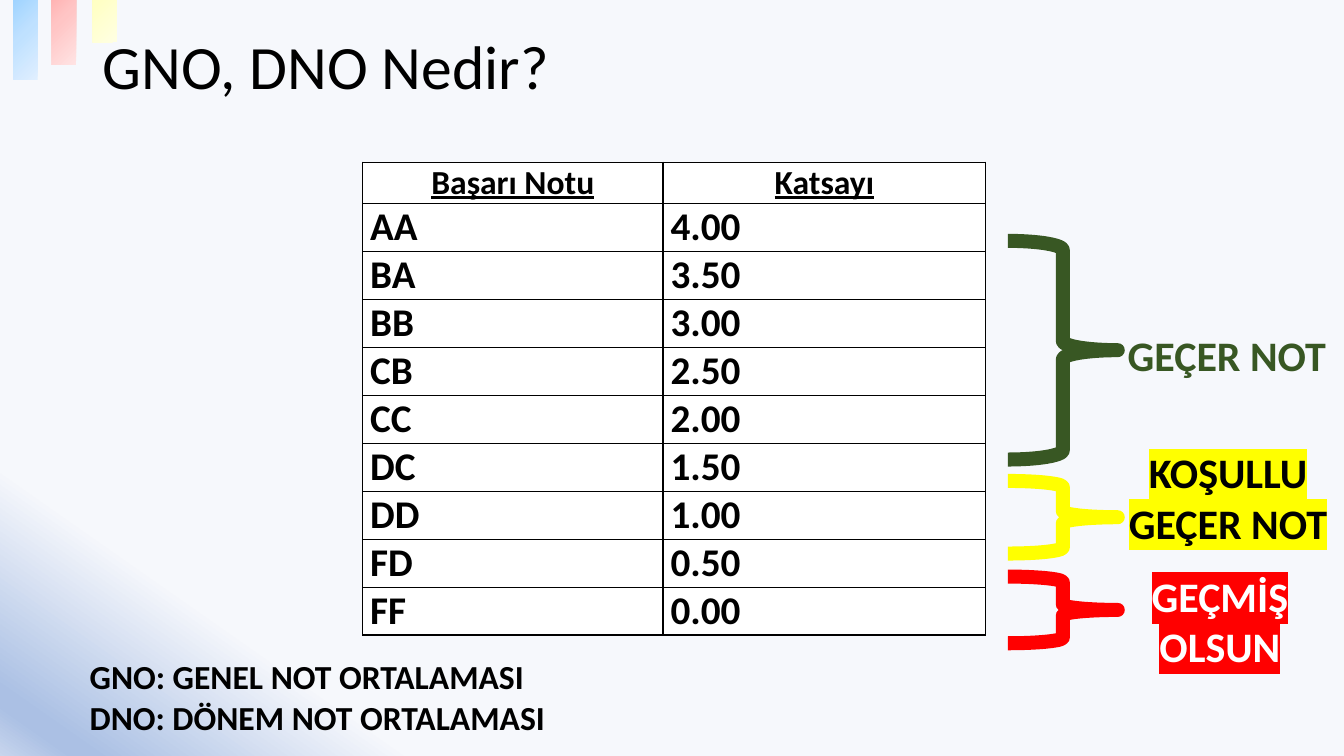
"""Build the slide that explains the grade coefficients behind GNO and DNO."""
from lxml.etree import SubElement
from pptx import Presentation
from pptx.dml.color import RGBColor
from pptx.enum.shapes import MSO_SHAPE as Shape
from pptx.enum.text import MSO_ANCHOR as Anchor, MSO_AUTO_SIZE as AutoSize, PP_ALIGN as Align
from pptx.oxml.ns import qn
from pptx.util import Cm, Pt

FONT = "Calibri"
BLACK = RGBColor(0x00, 0x00, 0x00)
WHITE = RGBColor(0xFF, 0xFF, 0xFF)
GREEN = RGBColor(0x38, 0x57, 0x23)
YELLOW = RGBColor(0xFF, 0xFF, 0x00)
RED = RGBColor(0xFF, 0x00, 0x00)
PALE = RGBColor(0xF6, 0xF8, 0xFC)
BLUE = RGBColor(0xAB, 0xC0, 0xE4)
LIGHT_BLUE = RGBColor(0xC7, 0xD5, 0xED)
BLUE_BAR = (RGBColor(0x96, 0xD0, 0xFF), RGBColor(0xBF, 0xE1, 0xFF), RGBColor(0xE0, 0xEF, 0xFF))
RED_BAR = (RGBColor(0xFF, 0xA0, 0xA0), RGBColor(0xFF, 0xC5, 0xC5), RGBColor(0xFF, 0xE3, 0xE3))
YELLOW_BAR = (RGBColor(0xFF, 0xFF, 0xA0), RGBColor(0xFF, 0xFF, 0xC5), RGBColor(0xFF, 0xFF, 0xE3))

GRADES = ["AA", "BA", "BB", "CB", "CC", "DC", "DD", "FD", "FF"]


def set_stops(gradient, stops):
    """Replace the colour stops of a gradient with (percent, colour) pairs."""
    stop_list = gradient.find(qn("a:gsLst"))
    for old_stop in list(stop_list):
        stop_list.remove(old_stop)
    for percent, colour in stops:
        stop = SubElement(stop_list, qn("a:gs"), pos=str(percent * 1000))
        SubElement(stop, qn("a:srgbClr"), val=str(colour))


def paint_background(slide):
    """Fade the slide to blue in its lower left corner."""
    fill = slide.background.fill
    fill.gradient()
    fill.gradient_angle = 235
    gradient = slide.background._cSld.find(".//" + qn("a:gradFill"))
    set_stops(gradient, [(83, PALE), (96, BLUE), (97, BLUE), (100, LIGHT_BLUE)])


def add_bar(slide, left, top, colours):
    """Add a decorative bar that lightens away from its top left corner."""
    bar = slide.shapes.add_shape(Shape.RECTANGLE, Cm(left), Cm(top), Cm(0.62), Cm(2.38))
    bar.shadow.inherit = False
    bar.line.fill.background()
    bar.fill.gradient()
    gradient = bar._element.spPr.find(qn("a:gradFill"))
    set_stops(gradient, zip((0, 50, 100), colours))
    gradient.remove(gradient.find(qn("a:lin")))
    circle = SubElement(gradient, qn("a:path"), path="circle")
    SubElement(circle, qn("a:fillToRect"), r="100000", b="100000")


def format_text(frame, size, colour=BLACK, bold=True, align=Align.LEFT, highlight=None):
    """Give every run of a text frame the same look."""
    for para in frame.paragraphs:
        para.alignment = align
        for span in para.runs:
            span.font.name = FONT
            span.font.size = Pt(size)
            span.font.bold = bold
            span.font.color.rgb = colour
            if highlight is not None:
                properties = span.font._element
                marker = SubElement(properties, qn("a:highlight"))
                SubElement(marker, qn("a:srgbClr"), val=str(highlight))
                properties.find(qn("a:solidFill")).addnext(marker)


def set_title(slide, text):
    """Move the title placeholder into place and fill it."""
    title = slide.shapes.title
    title.left, title.top, title.width, title.height = Cm(2.33), Cm(0.2), Cm(29.21), Cm(3.1)
    frame = title.text_frame
    frame.text = text
    frame.auto_size = AutoSize.NONE
    frame.vertical_anchor = Anchor.MIDDLE
    frame.paragraphs[0].line_spacing = 0.9
    format_text(frame, 44, bold=False)


def add_text(slide, place, text, size, **look):
    """Add a text box that fits its unwrapped lines."""
    box = slide.shapes.add_textbox(*map(Cm, place))
    frame = box.text_frame
    frame.text = text
    frame.word_wrap = False
    frame.auto_size = AutoSize.SHAPE_TO_FIT_TEXT
    format_text(frame, size, **look)


def add_brace(slide, top, height, colour):
    """Add a right brace beside the table."""
    brace = slide.shapes.add_shape(Shape.RIGHT_BRACE, Cm(25.4), Cm(top), Cm(2.77), Cm(height))
    brace.shadow.inherit = False
    brace.fill.background()
    brace.line.color.rgb = colour
    brace.line.width = Pt(10)


def fill_cell(cell, text, is_header):
    """Write one bordered white table cell."""
    properties = cell._tc.get_or_add_tcPr()
    for side in ("a:lnL", "a:lnR", "a:lnT", "a:lnB"):
        border = SubElement(properties, qn(side), w=str(Pt(1)))
        SubElement(SubElement(border, qn("a:solidFill")), qn("a:srgbClr"), val=str(BLACK))
    cell.fill.solid()
    cell.fill.fore_color.rgb = WHITE
    cell.margin_left = cell.margin_right = Cm(0.19)
    cell.margin_top = cell.margin_bottom = 0
    cell.vertical_anchor = Anchor.MIDDLE if is_header else Anchor.TOP
    frame = cell.text_frame
    frame.text = text
    format_text(frame, 24 if is_header else 28, align=Align.CENTER if is_header else Align.JUSTIFY)
    frame.paragraphs[0].runs[0].font.underline = is_header


def add_grade_table(slide):
    """Add the table of grades, whose coefficients fall from 4.00 in steps of 0.50."""
    rows = [("Başarı Notu", "Katsayı")]
    rows += [(grade, f"{4 - 0.5 * step:.2f}") for step, grade in enumerate(GRADES)]
    frame = slide.shapes.add_table(len(rows), 2, Cm(9.14), Cm(4.09), Cm(15.7), Cm(11.75))
    table = frame.table
    table.first_row = table.horz_banding = False
    table.columns[0].width, table.columns[1].width = Cm(7.57), Cm(8.13)
    for index, texts in enumerate(rows):
        table.rows[index].height = Cm(1.19 if index else 1.04)
        for column, text in enumerate(texts):
            fill_cell(table.cell(index, column), text, index == 0)


def main():
    """Build and save the deck."""
    deck = Presentation()
    deck.slide_width, deck.slide_height = Cm(33.87), Cm(19.05)
    slide = deck.slides.add_slide(deck.slide_layouts[5])
    paint_background(slide)
    add_grade_table(slide)
    add_bar(slide, 1.3, -0.75, RED_BAR)
    add_bar(slide, 0.33, -0.37, BLUE_BAR)
    add_bar(slide, 2.33, -1.32, YELLOW_BAR)
    set_title(slide, "GNO, DNO Nedir?")
    add_brace(slide, 6.07, 5.51, GREEN)
    add_brace(slide, 12.12, 1.83, YELLOW)
    add_brace(slide, 14.53, 1.68, RED)
    add_text(slide, (28.17, 8.18, 5.56, 1.55), "GEÇER NOT", 30, colour=GREEN)
    add_text(slide, (28.17, 11.13, 5.56, 2.82), "KOŞULLU\nGEÇER NOT", 30,
             align=Align.CENTER, highlight=YELLOW)
    add_text(slide, (28.75, 14.25, 3.99, 2.82), "GEÇMİŞ\nOLSUN", 30,
             colour=WHITE, align=Align.CENTER, highlight=RED)
    add_text(slide, (2.01, 16.41, 12.09, 2.31),
             "GNO: GENEL NOT ORTALAMASI\nDNO: DÖNEM NOT ORTALAMASI", 24)
    deck.save("out.pptx")


if __name__ == "__main__":
    main()
